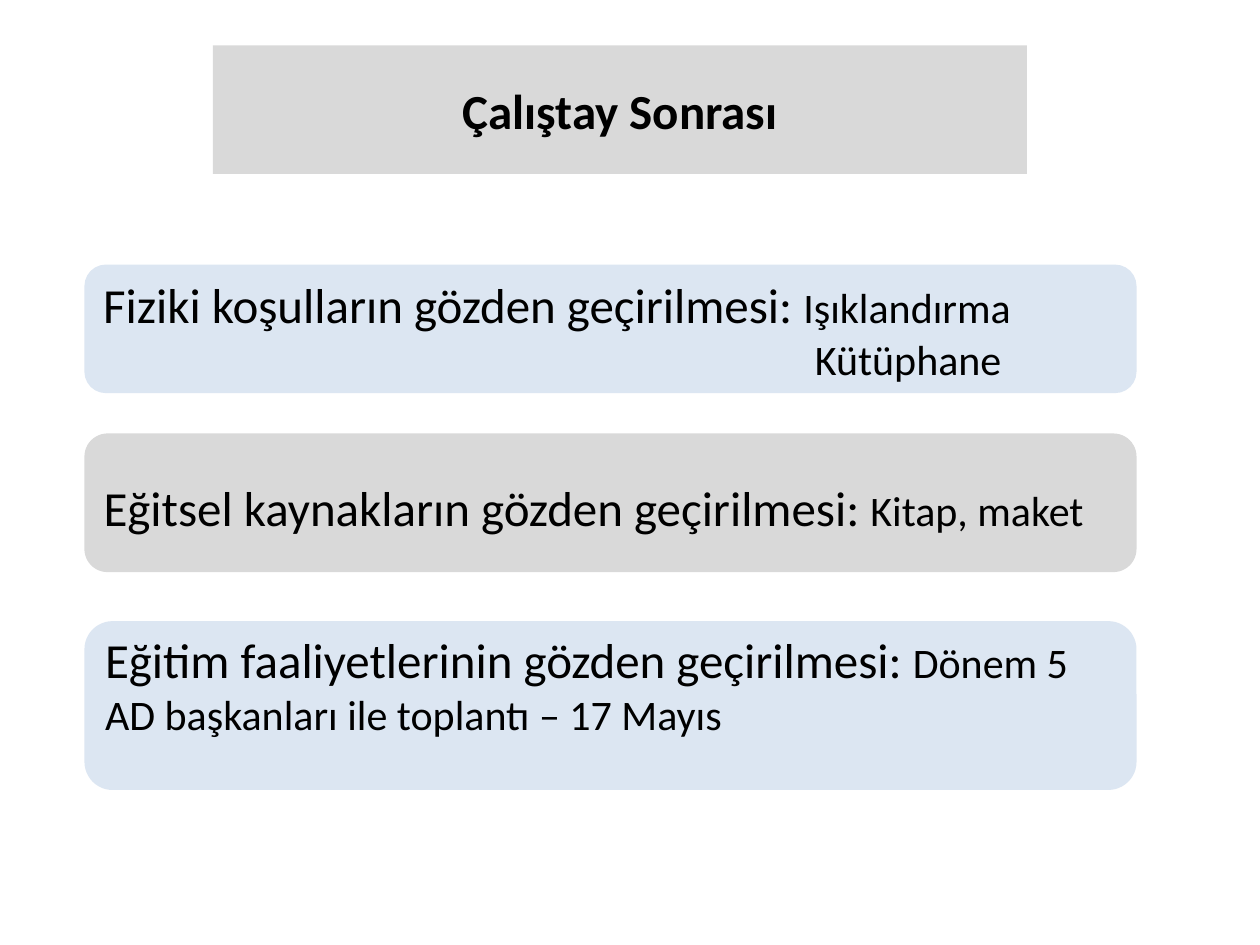
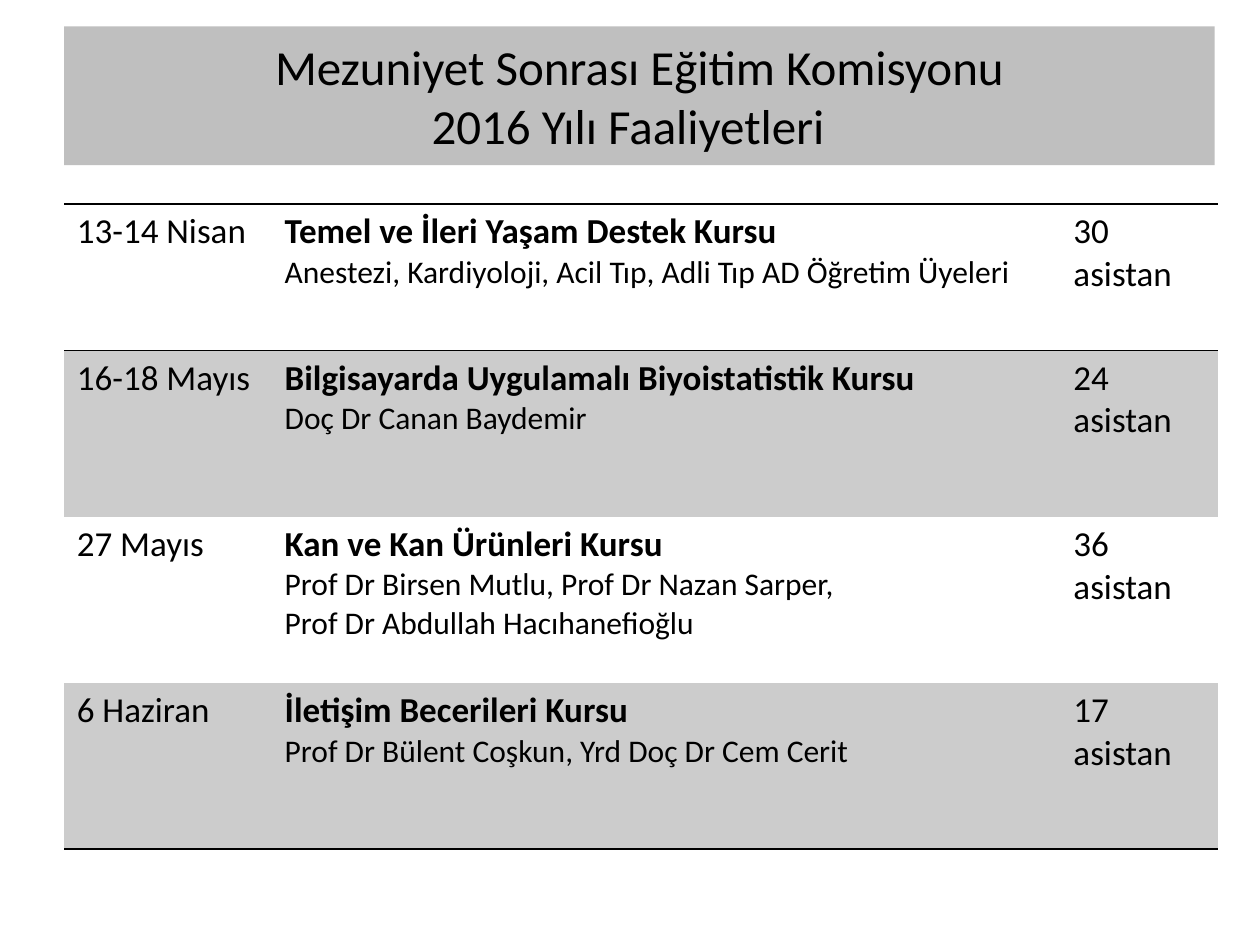
import pptx
import pptx.util
import pptx.dml.color
import pptx.enum.shapes
import pptx.enum.text
import pptx.oxml.ns
import lxml.etree

COLORS = {
    "text": "000000",
    "gray": "D9D9D9",
    "blue": "DCE6F2",
    "band": "BFBFBF",
    "row": "CCCCCC",
    "rule": "000000",
}
FONT = "Calibri"
HEADING, DETAIL, CELL, TEACHER = 28, 24, 20, 18
NO_STYLE = "{2D5ABB26-0587-4C30-8999-92F81FD0307C}"
ANCHOR = pptx.enum.text.MSO_ANCHOR
WIDTH, HEIGHT = pptx.util.Inches(10), pptx.util.Inches(7.5)

# Boxes are left, top, width, height in percent of the slide.
WORKSHOP_TITLE = {"lines": ["Çalıştay Sonrası"], "box": (16.9, 4.8, 64.6, 13.6),
                  "fill": "gray", "bold": True, "rounded": True}
COURSES_TITLE = {"lines": ["Mezuniyet Sonrası Eğitim Komisyonu", "2016 Yılı Faaliyetleri"],
                 "box": (5.1, 2.8, 91.3, 14.67), "fill": "band",
                 "last_right_indent": 0.18}

CARD_LEFT, CARD_WIDTH = 6.7, 83.5
REVIEW_CARDS = [
    {"topic": "Fiziki koşulların gözden geçirilmesi: ", "detail": "Işıklandırma",
     "indented": "Kütüphane", "top": 28, "height": 13.6, "fill": "blue",
     "anchor": ANCHOR.MIDDLE, "inset_top": 0.05},
    {"topic": "Eğitsel kaynakların gözden geçirilmesi: ", "detail": "Kitap, maket",
     "top": 45.87, "height": 14.67, "fill": "gray",
     "anchor": ANCHOR.MIDDLE, "inset_top": 0.12},
    {"topic": "Eğitim faaliyetlerinin gözden geçirilmesi: ",
     "detail": "Dönem 5 AD başkanları ile toplantı – 17 Mayıs",
     "top": 65.73, "height": 17.87, "fill": "blue",
     "anchor": ANCHOR.TOP, "inset_top": 0},
]
SECOND_LINE_INDENT = 5.65

COURSES = [
    ("13-14 Nisan", "Temel ve İleri Yaşam Destek Kursu",
     ["Anestezi, Kardiyoloji, Acil Tıp, Adli Tıp AD Öğretim Üyeleri"], "30 asistan"),
    ("16-18 Mayıs", "Bilgisayarda Uygulamalı Biyoistatistik Kursu",
     ["Doç Dr Canan Baydemir"], "24 asistan"),
    ("27 Mayıs", "Kan ve Kan Ürünleri Kursu",
     ["Prof Dr Birsen Mutlu, Prof Dr Nazan Sarper,", "Prof Dr Abdullah Hacıhanefioğlu"],
     "36 asistan"),
    ("6 Haziran", "İletişim Becerileri Kursu",
     ["Prof Dr Bülent Coşkun, Yrd Doç Dr Cem Cerit"], "17 asistan"),
]
TABLE_LEFT, TABLE_TOP = 5.1, 21.6
COLUMN_WIDTHS = [16.5, 62.6, 12.5]
ROW_HEIGHTS = [15.47, 17.6, 17.6, 17.6]


def to_lengths(box):
    """Turn percentages of the slide into lengths."""
    return [int(share * side / 100) for share, side in zip(box, (WIDTH, HEIGHT) * 2)]


def paint(fill, color):
    fill.solid()
    fill.fore_color.rgb = pptx.dml.color.RGBColor.from_string(COLORS[color])


def add_run(paragraph, text, size, bold=False):
    run = paragraph.add_run()
    run.text = text
    run.font.name = FONT
    run.font.size = pptx.util.Pt(size)
    run.font.bold = bold
    run.font.color.rgb = pptx.dml.color.RGBColor.from_string(COLORS["text"])


def write_lines(frame, lines):
    """Write one paragraph per line; a line is a list of (text, size, bold)."""
    for index, line in enumerate(lines):
        paragraph = frame.add_paragraph() if index else frame.paragraphs[0]
        for text, size, bold in line:
            add_run(paragraph, text, size, bold)


def set_indent(paragraph, side, inches):
    properties = paragraph._p.get_or_add_pPr()
    properties.set(side, str(pptx.util.Inches(inches)))


def add_titled_slide(presentation, title):
    slide = presentation.slides.add_slide(presentation.slide_layouts[5])
    shape = slide.shapes.title
    shape.left, shape.top, shape.width, shape.height = to_lengths(title["box"])
    if title.get("rounded"):
        geometry = lxml.etree.Element(pptx.oxml.ns.qn("a:prstGeom"), prst="roundRect")
        lxml.etree.SubElement(geometry, pptx.oxml.ns.qn("a:avLst"))
        shape.element.spPr.append(geometry)
    paint(shape.fill, title["fill"])
    frame = shape.text_frame
    frame.auto_size = pptx.enum.text.MSO_AUTO_SIZE.NONE
    frame.vertical_anchor = ANCHOR.MIDDLE
    bold = title.get("bold", False)
    write_lines(frame, [[(line, HEADING, bold)] for line in title["lines"]])
    for paragraph in frame.paragraphs:
        paragraph.alignment = pptx.enum.text.PP_ALIGN.CENTER
    if "last_right_indent" in title:
        set_indent(frame.paragraphs[-1], "marR", title["last_right_indent"])
    return slide


def add_card(slide, card):
    box = (CARD_LEFT, card["top"], CARD_WIDTH, card["height"])
    shape = slide.shapes.add_shape(
        pptx.enum.shapes.MSO_SHAPE.ROUNDED_RECTANGLE, *to_lengths(box))
    shape.shadow.inherit = False
    shape.line.fill.background()
    paint(shape.fill, card["fill"])
    frame = shape.text_frame
    frame.word_wrap = True
    frame.vertical_anchor = card["anchor"]
    frame.margin_top = pptx.util.Inches(card["inset_top"])
    lines = [[(card["topic"], HEADING, False), (card["detail"], DETAIL, False)]]
    if "indented" in card:
        lines.append([(card["indented"], DETAIL, False)])
    write_lines(frame, lines)
    for paragraph in frame.paragraphs:
        paragraph.alignment = pptx.enum.text.PP_ALIGN.LEFT
    for paragraph in frame.paragraphs[1:]:
        set_indent(paragraph, "marL", SECOND_LINE_INDENT)


def add_border(cell, side):
    """Rule one side of a cell: lnT or lnB."""
    qn = pptx.oxml.ns.qn
    properties = cell._tc.get_or_add_tcPr()
    line = lxml.etree.Element(qn(f"a:{side}"), w=str(pptx.util.Pt(1)))
    fill = lxml.etree.SubElement(line, qn("a:solidFill"))
    lxml.etree.SubElement(fill, qn("a:srgbClr"), val=COLORS["rule"])
    position = len(properties.findall(qn("a:lnT")))
    properties.insert(position, line)


def add_course_table(slide):
    box = (TABLE_LEFT, TABLE_TOP, sum(COLUMN_WIDTHS), sum(ROW_HEIGHTS))
    graphic_frame = slide.shapes.add_table(
        len(COURSES), len(COLUMN_WIDTHS), *to_lengths(box))
    style = graphic_frame.element.find(".//" + pptx.oxml.ns.qn("a:tableStyleId"))
    style.text = NO_STYLE
    table = graphic_frame.table
    table.first_row = table.horz_banding = False
    for column, share in zip(table.columns, COLUMN_WIDTHS):
        column.width = int(WIDTH * share / 100)
    for row, share in zip(table.rows, ROW_HEIGHTS):
        row.height = int(HEIGHT * share / 100)

    for index, (date, course, teachers, attendance) in enumerate(COURSES):
        contents = [
            [[(date, CELL, False)]],
            [[(course, CELL, True)]] + [[(name, TEACHER, False)] for name in teachers],
            [[(attendance, CELL, False)]],
        ]
        for cell, lines in zip(table.rows[index].cells, contents):
            write_lines(cell.text_frame, lines)
            if index % 2:
                paint(cell.fill, "row")
            else:
                cell.fill.background()
            if index == 0:
                add_border(cell, "lnT")
            if index in (0, len(COURSES) - 1):
                add_border(cell, "lnB")


def main():
    presentation = pptx.Presentation()
    presentation.slide_width, presentation.slide_height = WIDTH, HEIGHT
    workshop_slide = add_titled_slide(presentation, WORKSHOP_TITLE)
    for card in REVIEW_CARDS:
        add_card(workshop_slide, card)
    add_course_table(add_titled_slide(presentation, COURSES_TITLE))
    presentation.save("out.pptx")


if __name__ == "__main__":
    main()
